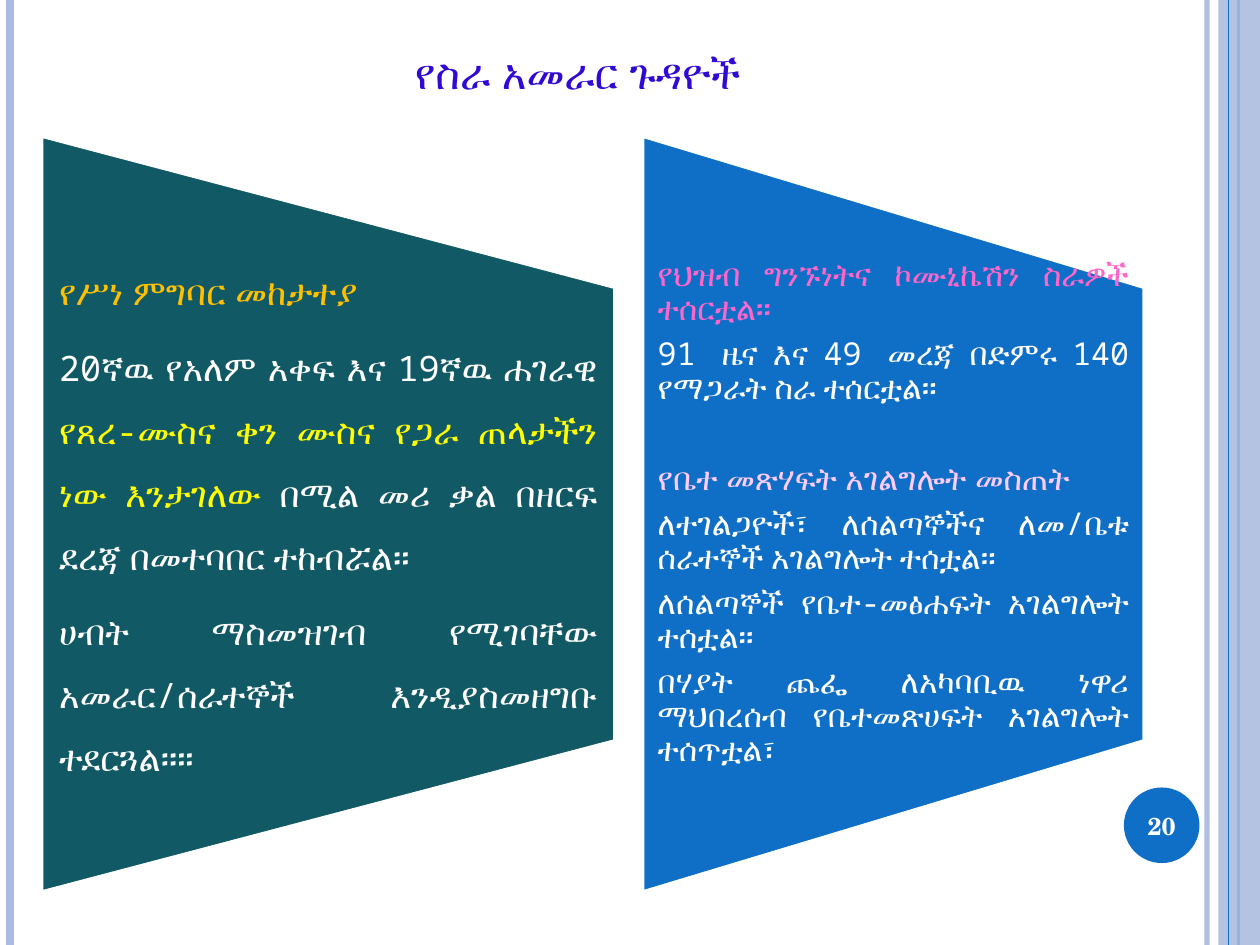
import pptx
import pptx.util
import pptx.dml.color
import pptx.enum.shapes
import pptx.enum.text
import pptx.oxml.ns
from lxml import etree

Inches, Pt = pptx.util.Inches, pptx.util.Pt
SHAPE = pptx.enum.shapes.MSO_SHAPE
ALIGN = pptx.enum.text.PP_ALIGN
ANCHOR = pptx.enum.text.MSO_ANCHOR
FONT = "Noto Sans Mono"
BLUE, PALE, WHITE = "0F6FC6", "ABBBDF", "FFFFFF"


def paint(color, code):
    color.rgb = pptx.dml.color.RGBColor.from_string(code)


def fade(part, percent):
    """Set the opacity of the first colour in a shape or line."""
    tone = next(part._element.spPr.iter(pptx.oxml.ns.qn("a:srgbClr")))
    alpha = etree.SubElement(tone, pptx.oxml.ns.qn("a:alpha"))
    alpha.set("val", str(percent * 1000))


def style(run, size, code, bold, face=FONT):
    run.font.name = face
    run.font.size = Pt(size)
    run.font.bold = bold
    paint(run.font.color, code)


def add_rail(slide, x, width, code):
    rail = slide.shapes.add_connector(
        pptx.enum.shapes.MSO_CONNECTOR.STRAIGHT,
        Inches(x), 0, Inches(x), Inches(7.5))
    paint(rail.line.color, code)
    rail.line.width = Pt(width)
    etree.SubElement(rail._element.spPr, pptx.oxml.ns.qn("a:effectLst"))
    return rail


def add_solid(slide, kind, box, code):
    shape = slide.shapes.add_shape(kind, *map(Inches, box))
    shape.shadow.inherit = False
    shape.fill.solid()
    paint(shape.fill.fore_color, code)
    shape.line.fill.background()
    return shape


def add_text(slide, box, inset):
    frame = slide.shapes.add_textbox(*map(Inches, box)).text_frame
    frame.word_wrap = True
    frame.vertical_anchor = ANCHOR.MIDDLE
    frame.margin_left = frame.margin_right = Inches(inset)
    frame.margin_top = frame.margin_bottom = 0
    return frame


def add_frame(slide):
    """Draw the rails on both edges of the slide."""
    fade(add_rail(slide, 9.58, 3, PALE), 93)
    add_rail(slide, 0.08, 4.5, PALE)
    add_rail(slide, 9.83, 1.5, BLUE)
    fade(add_solid(slide, SHAPE.RECTANGLE, (9.67, 0, 0.33, 7.5), PALE), 87)
    add_rail(slide, 9.75, 0.75, BLUE)


def add_badge(slide, left, top, side, number):
    add_solid(slide, SHAPE.OVAL, (left, top, side, side), BLUE)
    frame = add_text(slide, (left, top, side, side), 0)
    frame.text = number
    para = frame.paragraphs[0]
    para.alignment = ALIGN.CENTER
    style(para.runs[0], 14, WHITE, True, "TeX Gyre Schola")


def set_title(slide, left, top, width, height, text):
    title = slide.shapes.title
    title.left, title.top = Inches(left), Inches(top)
    title.width, title.height = Inches(width), Inches(height)
    frame = title.text_frame
    frame.vertical_anchor = ANCHOR.BOTTOM
    frame.text = text
    para = frame.paragraphs[0]
    para.alignment = ALIGN.CENTER
    style(para.runs[0], 24, "3009D5", True)
    para.runs[0]._r.get_or_add_rPr().set("cap", "small")


def add_panel(slide, box, code, paras, size, spacing, inset):
    """Each paragraph is (space before, bold, [(text, colour), ...])."""
    left, top, width, height = box
    shift = (height - width) / 2
    wedge = add_solid(slide, SHAPE.FLOWCHART_MANUAL_OPERATION,
                      (left - shift, top + shift, height, width), code)
    wedge.rotation = 270
    paint(wedge.line.color, WHITE)
    wedge.line.width = Pt(2)

    frame = add_text(slide, (left, top + height / 5, width, height * 0.6),
                     inset)
    for i, (before, bold, parts) in enumerate(paras):
        para = frame.add_paragraph() if i else frame.paragraphs[0]
        para.alignment = ALIGN.JUSTIFY
        para.line_spacing = spacing
        para.space_before = Pt(before)
        para.space_after = Pt(size * 0.35)
        for text, tone in parts:
            run = para.add_run()
            run.text = text
            style(run, size, tone, bold)


ETHICS = [
    (0, True, [("የሥነ ምግባር መከታተያ", "FFC000")]),
    (0, False, [
        ("20ኛዉ የአለም አቀፍ እና 19ኛዉ ሐገራዊ ", WHITE),
        ("የጸረ-ሙስና ቀን ሙስና የጋራ ጠላታችን ነው እንታገለው ", "FFFF00"),
        ("በሚል መሪ ቃል በዘርፍ ደረጃ በመተባበር ተከብሯል፡፡", WHITE)]),
    (0, False, [
        ("ሀብት ማስመዝገብ የሚገባቸው አመራር/ሰራተኞች እንዲያስመዘግቡ ተደርጓል፡፡፡፡", WHITE)]),
]
SERVICES = [
    (0, True, [("የህዝብ ግንኙነትና ኮሙኒኬሽን ስራዎች ተሰርቷል፡፡", "FF66CC")]),
    (0, False, [("91 ዜና እና 49 መረጃ በድምሩ 140 የማጋራት ስራ ተሰርቷል፡፡", WHITE)]),
    (26, True, [("የቤተ መጽሃፍት አገልግሎት መስጠት", "FFCCFF")]),
    (0, False, [
        ("ለተገልጋዮች፣ ለሰልጣኞችና ለመ/ቤቱ ሰራተኞች አገልግሎት ተሰቷል፡፡", WHITE)]),
    (0, False, [("ለሰልጣኞች የቤተ-መፅሐፍት አገልግሎት ተሰቷል፡፡", WHITE)]),
    (0, False, [
        ("በሃያት ጨፌ ለአካባቢዉ ነዋሪ ማህበረሰብ የቤተመጽሀፍት አገልግሎት ተሰጥቷል፣", WHITE)]),
]


def main():
    deck = pptx.Presentation()
    deck.slide_width, deck.slide_height = Inches(10), Inches(7.5)
    slide = deck.slides.add_slide(deck.slide_layouts[5])
    add_frame(slide)
    add_badge(slide, 8.92, 6.25, 0.6, "20")
    set_title(slide, 0.5, 0.3, 8.17, 0.53, "የስራ አመራር ጉዳዮች")
    add_panel(slide, (0.33, 1.08, 4.55, 6), "115964", ETHICS, 20, 1.5, 0.14)
    add_panel(slide, (5.1, 1.08, 3.98, 6), BLUE, SERVICES, 18, 0.9, 0.12)
    deck.save("out.pptx")


if __name__ == "__main__":
    main()
